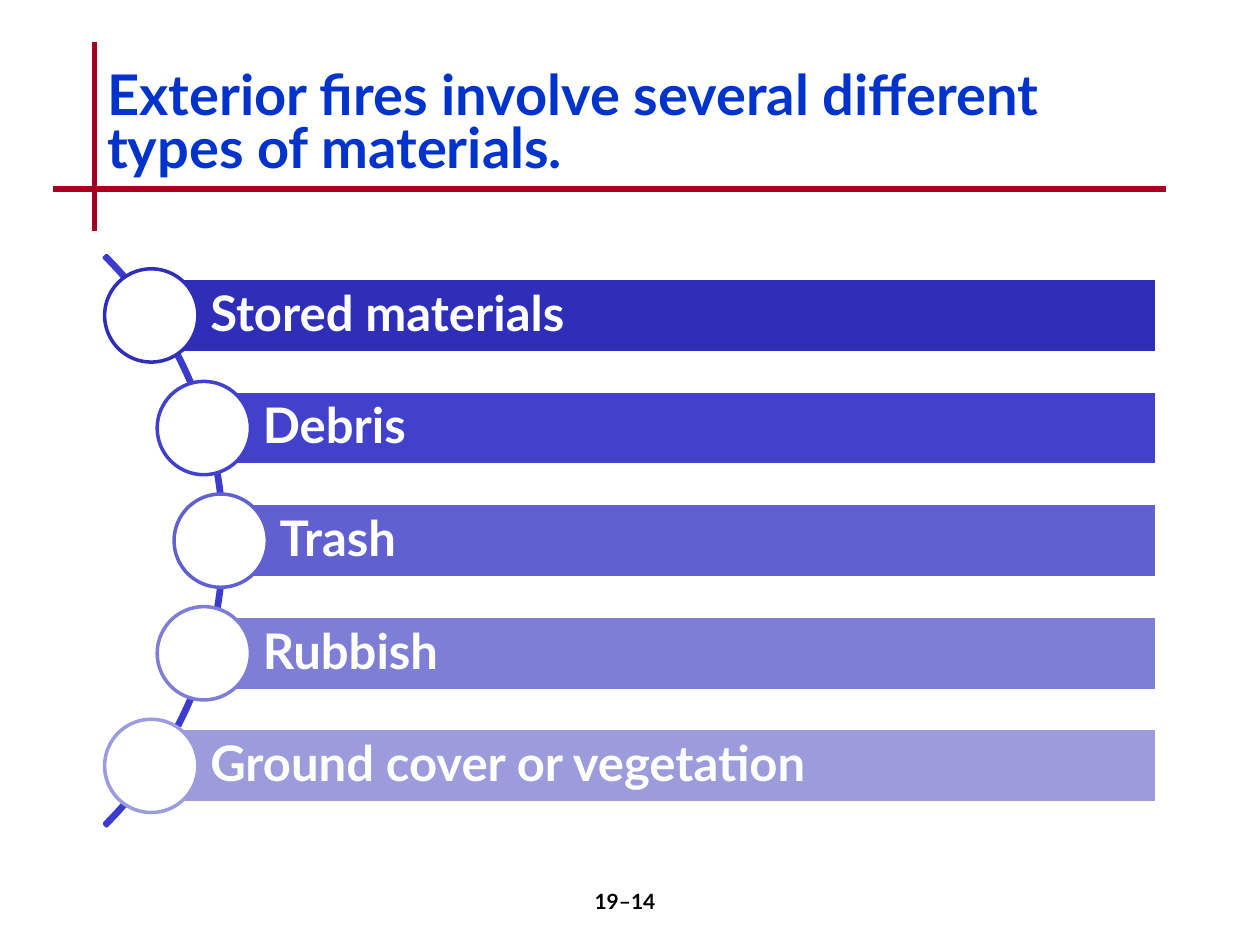
from dataclasses import dataclass

from lxml import etree
from pptx import Presentation
from pptx.dml.color import RGBColor
from pptx.enum.shapes import MSO_CONNECTOR, MSO_SHAPE as SHAPE
from pptx.enum.text import MSO_ANCHOR as ANCHOR, PP_ALIGN as ALIGN
from pptx.oxml.ns import qn
from pptx.util import Cm, Pt

WHITE = RGBColor(0xFF, 0xFF, 0xFF)
BLACK = RGBColor(0x00, 0x00, 0x00)
RED = RGBColor(0xA5, 0x00, 0x21)
TITLE_BLUE = RGBColor(0x00, 0x33, 0xCC)
ARC_BLUE = RGBColor(0x3B, 0x3B, 0xCD)

BAR_TOP, BAR_PITCH, BAR_HEIGHT, BAR_RIGHT = 5.61, 2.27, 1.5, 23.33
CIRCLE = 1.88


@dataclass
class Item:
    text: str
    left: float
    color: RGBColor


ITEMS = [
    Item("Stored materials", 3.05, RGBColor(0x2E, 0x2E, 0xB9)),
    Item("Debris", 4.11, RGBColor(0x41, 0x41, 0xCB)),
    Item("Trash", 4.45, RGBColor(0x60, 0x60, 0xD0)),
    Item("Rubbish", 4.11, RGBColor(0x7E, 0x7E, 0xD6)),
    Item("Ground cover or vegetation", 3.05, RGBColor(0x9C, 0x9C, 0xDD)),
]


def write(sp, text: str, size: int, color: RGBColor, frame: dict, para: dict) -> None:
    tf = sp.text_frame
    for name, value in {"word_wrap": True, **frame}.items():
        setattr(tf, name, value)
    p = tf.paragraphs[0]
    for name, value in para.items():
        setattr(p, name, value)
    r = p.add_run()
    r.text = text
    for name, value in {"name": "Lato", "size": Pt(size), "bold": True}.items():
        setattr(r.font, name, value)
    r.font.color.rgb = color


def add_text(s, box: tuple, text: str, size: int, color: RGBColor,
             frame: dict, para: dict) -> None:
    sp = s.shapes.add_textbox(*map(Cm, box))
    write(sp, text, size, color, frame, para)


def add_rule(s, x1: float, y1: float, x2: float, y2: float) -> None:
    c = s.shapes.add_connector(MSO_CONNECTOR.STRAIGHT, *map(Cm, (x1, y1, x2, y2)))
    c.line.color.rgb = RED
    c.line.width = Pt(3)
    etree.SubElement(c._element.spPr, qn("a:effectLst"))


def add_outlined(s, kind: SHAPE, box: tuple, fill: RGBColor, line: RGBColor):
    sp = s.shapes.add_shape(kind, *map(Cm, box))
    sp.shadow.inherit = False
    sp.fill.solid()
    sp.fill.fore_color.rgb = fill
    sp.line.color.rgb = line
    sp.line.width = Pt(2)
    return sp


def add_item(s, item: Item, top: float) -> None:
    bar = add_outlined(s, SHAPE.RECTANGLE,
                       (item.left, top, BAR_RIGHT - item.left, BAR_HEIGHT),
                       item.color, WHITE)
    write(bar, item.text, 28, WHITE,
          {"vertical_anchor": ANCHOR.MIDDLE, "margin_left": Cm(1.19),
           "margin_right": Cm(0.2), "margin_top": Cm(0.2), "margin_bottom": Cm(0.2)},
          {"alignment": ALIGN.LEFT, "line_spacing": 0.9})
    # Circle centred on the left end of the bar
    add_outlined(s, SHAPE.OVAL,
                 (item.left - CIRCLE / 2, top + (BAR_HEIGHT - CIRCLE) / 2, CIRCLE, CIRCLE),
                 WHITE, item.color)


def main() -> None:
    prs = Presentation()
    prs.slide_width, prs.slide_height = Cm(25.4), Cm(19.05)
    s = prs.slides.add_slide(prs.slide_layouts[6])

    # Crossed rules and title
    add_rule(s, 1.91, 0.84, 1.91, 4.65)
    add_rule(s, 1.07, 3.81, 23.5, 3.81)
    add_text(s, (1.91, 1.27, 22.07, 2.54),
             "Exterior fires involve several different types of materials.",
             32, TITLE_BLUE, {"vertical_anchor": ANCHOR.MIDDLE}, {"line_spacing": 0.8})

    # Page number
    add_text(s, (9.96, 17.78, 5.28, 1.27), "19–14", 12, BLACK,
             {"vertical_anchor": ANCHOR.TOP}, {"alignment": ALIGN.CENTER})

    # Arc behind the list
    arc = add_outlined(s, SHAPE.BLOCK_ARC, (-11.73, 2.77, 16.26, 16.26), ARC_BLUE, ARC_BLUE)
    arc.fill.background()
    for i, value in enumerate((189, 27, 0.004)):
        arc.adjustments[i] = value

    # List of materials
    for i, item in enumerate(ITEMS):
        add_item(s, item, BAR_TOP + i * BAR_PITCH)

    prs.save("out.pptx")


if __name__ == "__main__":
    main()
